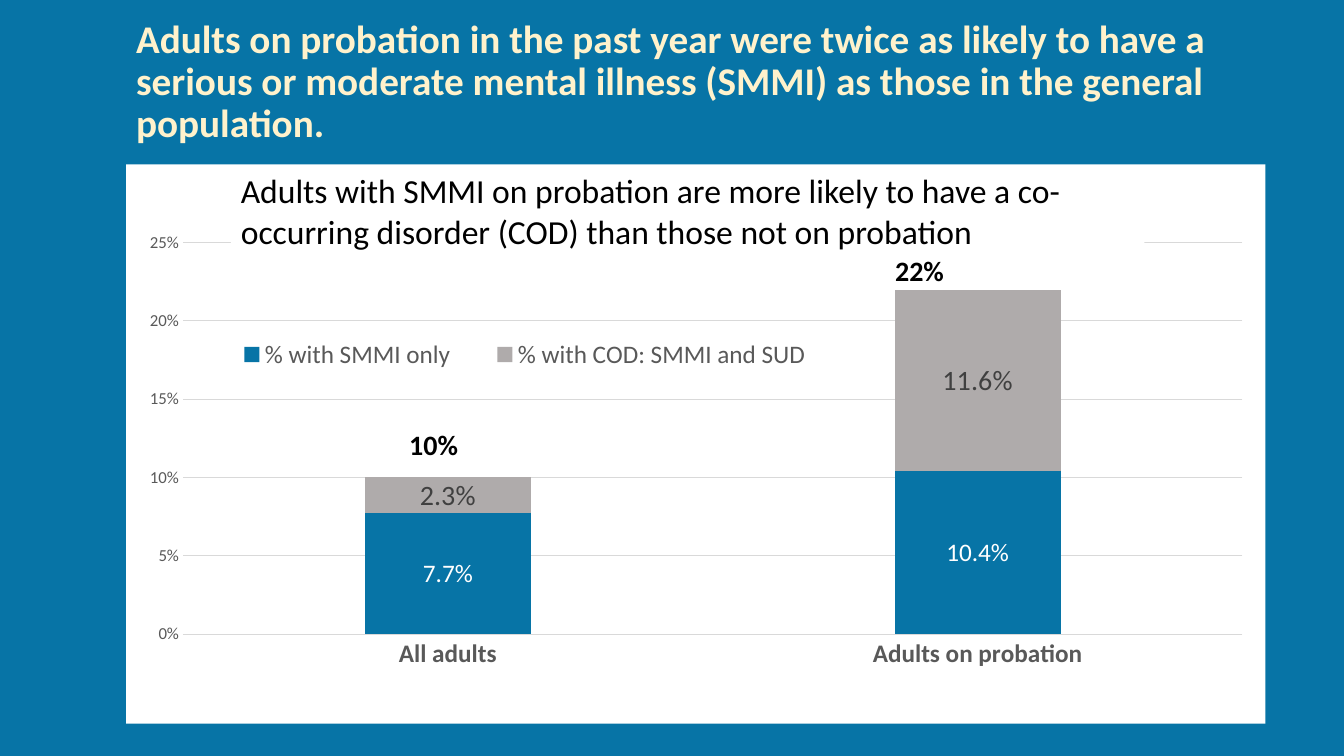
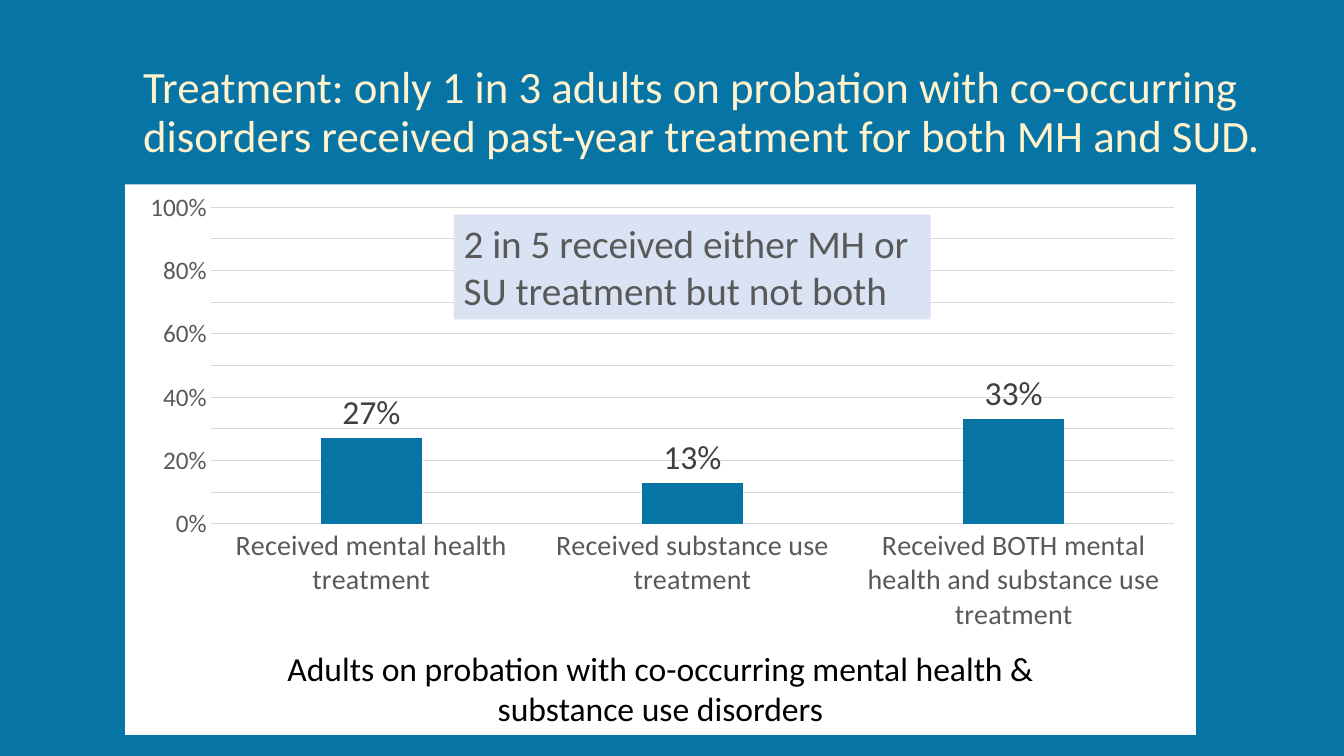
from copy import deepcopy
from dataclasses import dataclass
from typing import Any, Optional

from lxml import etree
from pptx import Presentation
from pptx import util as u
from pptx.chart.data import CategoryChartData
from pptx.dml.color import RGBColor
from pptx.enum import chart as c
from pptx.enum import text as t
from pptx.oxml import parse_xml
from pptx.oxml.ns import nsdecls, qn

EMU_PER_PX = 9144
FONT = "Calibri"
BLUE = "0774A6"
CREAM = "FFF2CC"
WHITE = "FFFFFF"
BLACK = "000000"
SILVER = "AFABAB"
PALE_BLUE = "DAE3F3"
DARK_GRAY = "404040"
TEXT_GRAY = "595959"
GRID_GRAY = "D9D9D9"


@dataclass(frozen=True)
class Box:
    left: int
    top: int
    width: int
    height: int

    def emu(self) -> list[int]:
        return [px(n) for n in (self.left, self.top, self.width, self.height)]


@dataclass(frozen=True)
class Style:
    size: int
    color: str = BLACK
    bold: bool = False


@dataclass(frozen=True)
class Note:
    box: Box
    lines: tuple[str, ...]
    style: Style
    fill: Optional[str] = None
    alignment: Any = t.PP_ALIGN.LEFT


@dataclass(frozen=True)
class Series:
    name: str
    values: tuple[float, ...]
    color: str
    label: Style


@dataclass(frozen=True)
class ColumnChart:
    box: Box
    kind: Any
    categories: tuple[str, ...]
    series: tuple[Series, ...]
    overlap: int
    maximum: float
    major_unit: float
    plot_layout: tuple[float, ...]
    label_format: str
    label_position: Any
    category_style: Style
    value_style: Style
    minor_unit: Optional[float] = None
    legend_layout: Optional[tuple[float, ...]] = None
    legend_style: Style = Style(18, TEXT_GRAY)


@dataclass(frozen=True)
class SlideContent:
    title: str
    title_box: Box
    title_style: Style
    chart: ColumnChart
    notes: tuple[Note, ...]


def px(length: int) -> int:
    return length * EMU_PER_PX


def rgb(color: str) -> RGBColor:
    return RGBColor.from_string(color)


def assign(target: Any, values: dict[str, Any]) -> None:
    for name, value in values.items():
        setattr(target, name, value)


def format_font(font: Any, style: Style) -> None:
    assign(font, {"name": FONT, "size": u.Pt(style.size), "bold": style.bold})
    font.color.rgb = rgb(style.color)


def fill_solid(fill: Any, color: str) -> None:
    fill.solid()
    fill.fore_color.rgb = rgb(color)


def format_line(line: Any) -> None:
    line.width = u.Pt(0.75)
    fill_solid(line.fill, GRID_GRAY)


def set_layout(parent: Any, index: int, layout: tuple[float, ...], inner: bool) -> None:
    for existing in parent.findall(qn("c:layout")):
        parent.remove(existing)
    element = parse_xml(f"<c:layout {nsdecls('c')}><c:manualLayout/></c:layout>")
    values = {"layoutTarget": "inner"} if inner else {}
    values |= {"xMode": "edge", "yMode": "edge"}
    values |= dict(zip("xywh", map(str, layout)))
    for name, value in values.items():
        etree.SubElement(element[0], qn(f"c:{name}")).set("val", value)
    parent.insert(index, element)


def fill_chart_area(chart: Any) -> None:
    area = parse_xml(
        f"<c:spPr {nsdecls('c', 'a')}><a:solidFill><a:srgbClr val='{WHITE}'/></a:solidFill>"
        "<a:ln><a:noFill/></a:ln></c:spPr>"
    )
    chart.element.find(qn("c:chart")).addnext(area)


def match_minor_gridlines(chart: Any) -> None:
    major = next(chart.element.iter(qn("c:majorGridlines")))
    minor = next(chart.element.iter(qn("c:minorGridlines")))
    minor.append(deepcopy(major.find(qn("c:spPr"))))


def format_axes(chart: Any, content: ColumnChart) -> None:
    category_axis, value_axis = chart.category_axis, chart.value_axis
    for axis, style in (
        (category_axis, content.category_style),
        (value_axis, content.value_style),
    ):
        axis.major_tick_mark = axis.minor_tick_mark = c.XL_TICK_MARK.NONE
        format_font(axis.tick_labels.font, style)
    format_line(category_axis.format.line)
    value_axis.format.line.fill.background()
    assign(value_axis, {
        "minimum_scale": 0,
        "maximum_scale": content.maximum,
        "major_unit": content.major_unit,
        "has_major_gridlines": True,
    })
    format_line(value_axis.major_gridlines.format.line)
    if content.minor_unit:
        assign(value_axis, {"minor_unit": content.minor_unit, "has_minor_gridlines": True})
        match_minor_gridlines(chart)
    assign(value_axis.tick_labels, {"number_format": "0%", "number_format_is_linked": False})


def add_column_chart(slide: Any, content: ColumnChart) -> None:
    data = CategoryChartData(number_format=content.label_format)
    data.categories = content.categories
    for series in content.series:
        data.add_series(series.name, series.values)
    chart = slide.shapes.add_chart(content.kind, *content.box.emu(), data).chart
    chart.has_title = False
    format_font(chart.font, Style(18))
    fill_chart_area(chart)
    format_axes(chart, content)
    plot = chart.plots[0]
    assign(plot, {"gap_width": 219, "overlap": content.overlap, "vary_by_categories": False})
    for drawn, series in zip(plot.series, content.series):
        fill_solid(drawn.format.fill, series.color)
        format_font(drawn.data_labels.font, series.label)
        assign(drawn.data_labels, {
            "show_value": True,
            "number_format": content.label_format,
            "number_format_is_linked": False,
            "position": content.label_position,
        })
    chart_element = chart.element.find(qn("c:chart"))
    set_layout(chart_element.find(qn("c:plotArea")), 0, content.plot_layout, inner=True)
    chart.has_legend = content.legend_layout is not None
    if content.legend_layout:
        legend = chart.legend
        assign(legend, {"position": c.XL_LEGEND_POSITION.BOTTOM, "include_in_layout": False})
        format_font(legend.font, content.legend_style)
        set_layout(chart_element.find(qn("c:legend")), 1, content.legend_layout, inner=False)


def add_note(slide: Any, note: Note) -> None:
    shape = slide.shapes.add_textbox(*note.box.emu())
    if note.fill:
        fill_solid(shape.fill, note.fill)
    frame = shape.text_frame
    frame.text = "\n".join(note.lines)
    assign(frame, {"word_wrap": True, "auto_size": t.MSO_AUTO_SIZE.SHAPE_TO_FIT_TEXT})
    for paragraph in frame.paragraphs:
        paragraph.alignment = note.alignment
        format_font(paragraph.runs[0].font, note.style)


def set_title(slide: Any, content: SlideContent) -> None:
    title = slide.shapes.title
    assign(title, dict(zip(("left", "top", "width", "height"), content.title_box.emu())))
    frame = title.text_frame
    frame.text = content.title
    assign(frame, {
        "word_wrap": True,
        "auto_size": t.MSO_AUTO_SIZE.NONE,
        "vertical_anchor": t.MSO_ANCHOR.MIDDLE,
    })
    paragraph = frame.paragraphs[0]
    assign(paragraph, {"alignment": t.PP_ALIGN.LEFT, "line_spacing": 0.9})
    format_font(paragraph.runs[0].font, content.title_style)


TOTAL_STYLE = Style(20, bold=True)

SLIDES = (
    SlideContent(
        "Adults on probation in the past year were twice as likely to have a serious or "
        "moderate mental illness (SMMI) as those in the general population.",
        Box(125, 46, 1150, 72),
        Style(28, CREAM, True),
        ColumnChart(
            Box(125, 163, 1130, 555),
            c.XL_CHART_TYPE.COLUMN_STACKED,
            ("All adults", "Adults on probation"),
            (
                Series("% with SMMI only", (0.077, 0.104), BLUE, Style(18, WHITE)),
                Series("% with COD: SMMI and SUD", (0.023, 0.116), SILVER, Style(20, DARK_GRAY)),
            ),
            overlap=100,
            maximum=0.25,
            major_unit=0.05,
            plot_layout=(0.05, 0.14, 0.93, 0.7),
            label_format="0.0%",
            label_position=c.XL_LABEL_POSITION.CENTER,
            category_style=Style(18, TEXT_GRAY, True),
            value_style=Style(12, TEXT_GRAY),
            legend_layout=(0.07, 0.3, 0.56, 0.08),
        ),
        (
            Note(
                Box(229, 164, 906, 91),
                ("Adults with SMMI on probation are more likely to have a co-occurring "
                 "disorder (COD) than those not on probation",),
                Style(24),
                WHITE,
            ),
            Note(Box(396, 419, 86, 44), ("10%",), TOTAL_STYLE),
            Note(Box(878, 247, 86, 44), ("22%",), TOTAL_STYLE),
        ),
    ),
    SlideContent(
        "Treatment: only 1 in 3 adults on probation with co-occurring disorders received "
        "past-year treatment for both MH and SUD.",
        Box(132, 40, 1150, 145),
        Style(32, CREAM),
        ColumnChart(
            Box(124, 183, 1062, 455),
            c.XL_CHART_TYPE.COLUMN_CLUSTERED,
            (
                "Received mental health treatment",
                "Received substance use treatment",
                "Received BOTH mental health and substance use treatment",
            ),
            (Series("Series 1", (0.27, 0.13, 0.33), BLUE, Style(24, DARK_GRAY)),),
            overlap=-27,
            maximum=1,
            major_unit=0.2,
            minor_unit=0.1,
            plot_layout=(0.08, 0.05, 0.9, 0.69),
            label_format="0%",
            label_position=c.XL_LABEL_POSITION.OUTSIDE_END,
            category_style=Style(20, TEXT_GRAY),
            value_style=Style(18, TEXT_GRAY),
        ),
        (
            Note(
                Box(450, 213, 473, 104),
                ("2 in 5 received either MH or SU treatment but not both",),
                Style(28, TEXT_GRAY),
                PALE_BLUE,
            ),
            Note(
                Box(124, 638, 1062, 91),
                ("Adults on probation with co-occurring mental health &", "substance use disorders"),
                Style(24),
                WHITE,
                t.PP_ALIGN.CENTER,
            ),
        ),
    ),
)


def main() -> None:
    presentation = Presentation()
    assign(presentation, {"slide_width": px(1333), "slide_height": px(750)})
    fill_solid(presentation.slide_master.background.fill, BLUE)
    for content in SLIDES:
        slide = presentation.slides.add_slide(presentation.slide_layouts[5])
        set_title(slide, content)
        add_column_chart(slide, content.chart)
        for note in content.notes:
            add_note(slide, note)
    presentation.save("out.pptx")


if __name__ == "__main__":
    main()
